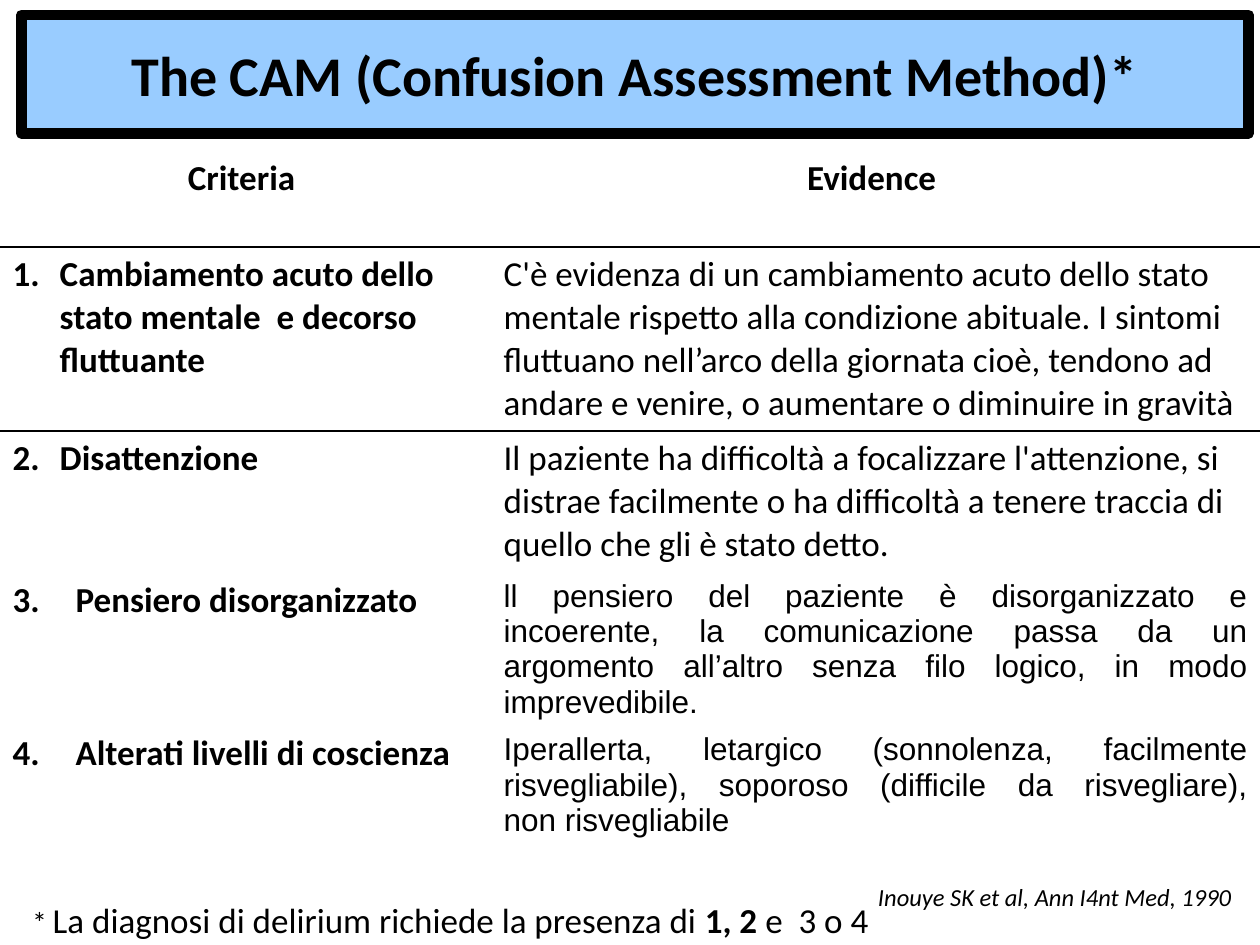
from lxml.etree import SubElement
from pptx import Presentation
from pptx.dml.color import RGBColor
from pptx.enum.shapes import MSO_SHAPE as Shape
from pptx.enum.text import MSO_ANCHOR as Anchor, PP_ALIGN as Align
from pptx.oxml.ns import qn
from pptx.util import Cm, Pt

BLACK = RGBColor(0, 0, 0)
LIGHT_BLUE = RGBColor(0x99, 0xCC, 0xFF)

HEADERS = ("Criteria ", "Evidence ")
CALIBRI = dict(size=20)
ARIAL = dict(size=18, font="Arial", align=Align.JUSTIFY)
CRITERIA = [
    ("Cambiamento acuto dello stato mentale  e decorso fluttuante", 0.95,
     "C'è evidenza di un cambiamento acuto dello stato mentale rispetto alla "
     "condizione abituale. I sintomi fluttuano nell’arco della giornata cioè, "
     "tendono ad andare e venire, o aumentare o diminuire in gravità", CALIBRI),
    ("Disattenzione", 0.95,
     "Il paziente ha difficoltà a focalizzare l'attenzione, si distrae facilmente "
     "o ha difficoltà a tenere traccia di quello che gli è stato detto.", CALIBRI),
    ("Pensiero disorganizzato", 1.27,
     "ll pensiero del paziente è disorganizzato e incoerente, la comunicazione "
     "passa da un argomento all’altro senza filo logico, in modo imprevedibile.",
     ARIAL),
    ("Alterati livelli di coscienza", 1.27,
     "Iperallerta, letargico (sonnolenza, facilmente risvegliabile), soporoso "
     "(difficile da risvegliare),\nnon risvegliabile", ARIAL),
]


def write(p, text, size=20, font="Calibri", bold=False, italic=False, align=None):
    if align is not None:
        p.alignment = align
    for i, line in enumerate(text.split("\n")):
        if i:
            p.add_line_break()
        r = p.add_run()
        r.text = line
        r.font.size = Pt(size)
        r.font.name = font
        r.font.bold = bold
        r.font.italic = italic
        r.font.color.rgb = BLACK


def number(p, start, indent):
    pPr = p._p.get_or_add_pPr()
    pPr.set("marL", str(Cm(indent)))
    pPr.set("indent", str(-Cm(indent)))
    SubElement(pPr, qn("a:buFont"), typeface="+mj-lt")
    SubElement(pPr, qn("a:buAutoNum"), type="arabicPeriod", startAt=str(start))


def rule(cell, side):
    ln = SubElement(cell._tc.get_or_add_tcPr(), qn(f"a:{side}"), w=str(Pt(1)))
    fill = SubElement(ln, qn("a:solidFill"))
    SubElement(fill, qn("a:srgbClr"), val=str(BLACK))


class Deck:
    def __init__(self, width, height):
        self.prs = Presentation()
        self.prs.slide_width, self.prs.slide_height = Cm(width), Cm(height)
        self.s = self.prs.slides.add_slide(self.prs.slide_layouts[6])

    def banner(self, box, text):
        sp = self.s.shapes.add_shape(Shape.RECTANGLE, *map(Cm, box))
        sp.shadow.inherit = False
        sp.fill.solid()
        sp.fill.fore_color.rgb = LIGHT_BLUE
        sp.line.color.rgb = BLACK
        sp.line.width = Pt(6)
        tf = sp.text_frame
        tf.vertical_anchor = Anchor.MIDDLE
        write(tf.paragraphs[0], text, size=32, bold=True, align=Align.CENTER)

    def text(self, box, runs, wrap=True):
        tf = self.s.shapes.add_textbox(*map(Cm, box)).text_frame
        tf.word_wrap = wrap
        for text, style in runs:
            write(tf.paragraphs[0], text, **style)

    def table(self, left, top, widths, heights):
        frame = self.s.shapes.add_table(
            len(heights), len(widths), Cm(left), Cm(top),
            Cm(sum(widths)), Cm(sum(heights)))
        table = frame.table
        table.first_row = table.horz_banding = False
        style = table._tbl.tblPr.find(qn("a:tableStyleId"))
        style.text = "{2D5ABB26-0587-4C30-8999-92F81FD0307C}"
        for column, width in zip(table.columns, widths):
            column.width = Cm(width)
        for row, height in zip(table.rows, heights):
            row.height = Cm(height)
        for c in range(len(widths)):
            rule(table.cell(0, c), "lnB")
            rule(table.cell(1, c), "lnT")
        for cell in table.iter_cells():
            cell.fill.background()
        return table


def main():
    deck = Deck(25.4, 19.05)
    deck.banner((0.43, 0.3, 24.74, 2.39), "The CAM (Confusion Assessment Method)*")

    table = deck.table(0, 3.05, (9.9, 15.5), (1.93, 2.67) + (2.21,) * 4)
    for c, header in enumerate(HEADERS):
        p = table.cell(0, c).text_frame.paragraphs[0]
        write(p, header, bold=True, align=Align.CENTER)
    for i, (criterion, indent, evidence, style) in enumerate(CRITERIA, 1):
        p = table.cell(i, 0).text_frame.paragraphs[0]
        number(p, i, indent)
        write(p, criterion, bold=True)
        write(table.cell(i, 1).text_frame.paragraphs[0], evidence, **style)

    deck.text((0.43, 17.98, 17.48, 1.12), [
        ("* ", dict(size=16, font="Lato")),
        ("La diagnosi di delirium richiede la presenza di ", {}),
        ("1, 2 ", dict(bold=True)),
        ("e  3 o 4", {}),
    ])
    deck.text((17.45, 17.65, 7.7, 0.86), [
        ("Inouye SK et al, Ann I4nt Med, 1990", dict(size=14, italic=True)),
    ], wrap=False)
    deck.prs.save("out.pptx")


if __name__ == "__main__":
    main()
